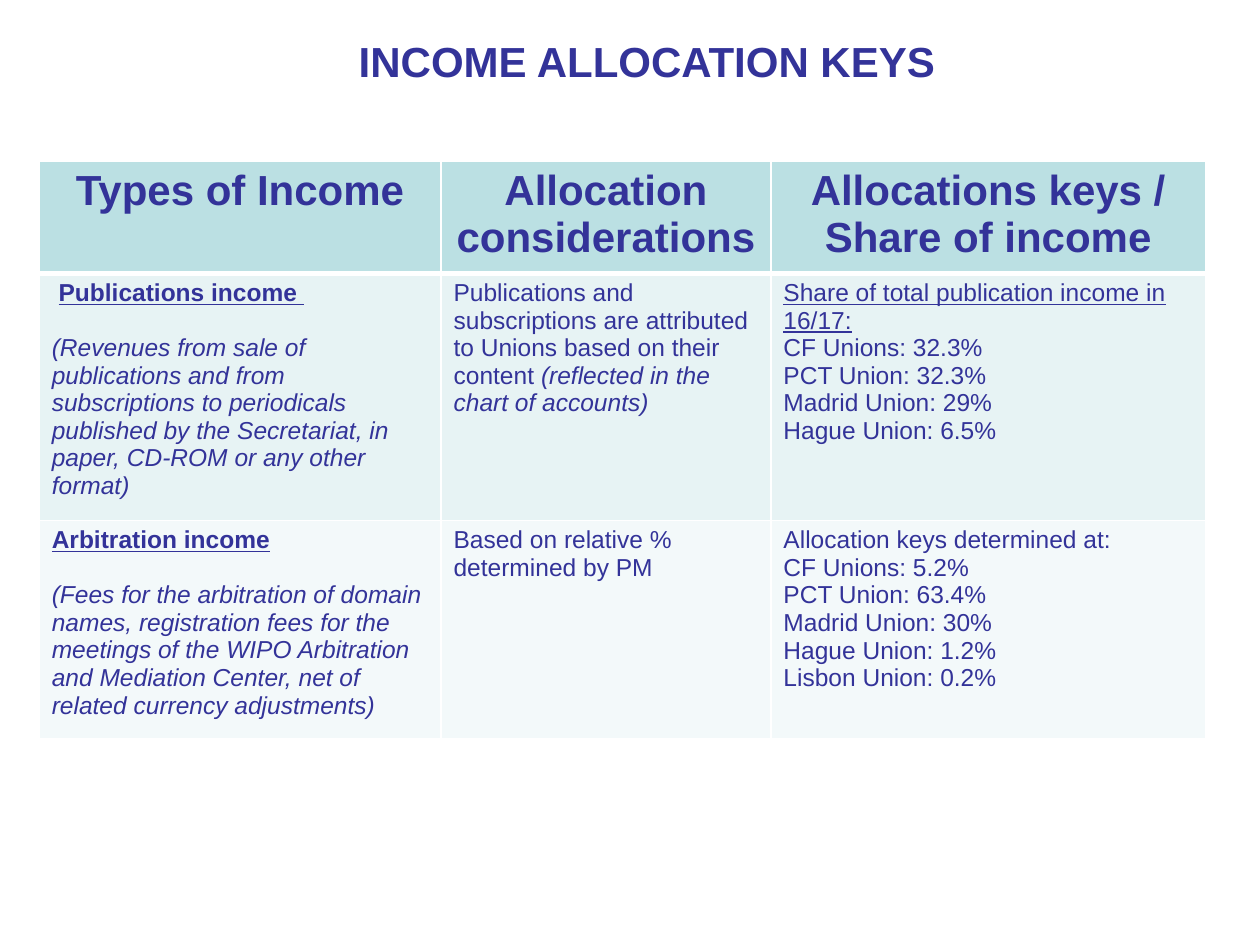
from lxml.etree import SubElement
from pptx import Presentation
from pptx.dml.color import RGBColor
from pptx.enum.text import MSO_ANCHOR, PP_ALIGN
from pptx.oxml.ns import qn
from pptx.util import Cm, Pt

COLORS = {"text": "333399", "border": "FFFFFF"}
ROW_FILLS = ["BBE0E3", "E7F3F4", "F3F9FA"]
ROW_HEIGHTS = [2.26, 4.98, 4.4]
COLUMN_WIDTHS = [8.1, 6.65, 8.76]

TITLE = "INCOME ALLOCATION KEYS"
HEADER = {"size": 24, "bold": True, "align": PP_ALIGN.CENTER}
HEADING = {"bold": True, "underline": True}
DESCRIPTION = {"italic": True, "before": 15.7}

ROWS = [
    [
        [("Types of Income", HEADER)],
        [("Allocation considerations", HEADER)],
        [("Allocations keys /", HEADER), ("Share of income", HEADER)],
    ],
    [
        [
            (" ", {}),
            ("Publications income\u00a0", {**HEADING, "same_line": True}),
            ("(Revenues from sale of publications and from subscriptions to periodicals "
             "published by the Secretariat, in paper, CD‑ROM or any other format)", DESCRIPTION),
        ],
        [
            ("Publications and subscriptions are attributed to Unions based on their content ", {}),
            ("(reflected in the chart of accounts)", {"italic": True, "same_line": True}),
        ],
        [
            ("Share of total publication income in 16/17:", {"underline": True}),
            ("CF Unions: 32.3%", {}),
            ("PCT Union: 32.3%", {}),
            ("Madrid Union: 29%", {}),
            ("Hague Union: 6.5%", {}),
        ],
    ],
    [
        [
            ("Arbitration income", HEADING),
            ("(Fees for the arbitration of domain names, registration fees for the meetings "
             "of the WIPO Arbitration and Mediation Center, net of related currency adjustments)",
             DESCRIPTION),
        ],
        [("Based on relative % determined by PM", {})],
        [
            ("Allocation keys determined at:", {}),
            ("CF Unions: 5.2%", {}),
            ("PCT Union: 63.4%", {}),
            ("Madrid Union: 30%", {}),
            ("Hague Union: 1.2%", {}),
            ("Lisbon Union: 0.2%", {}),
        ],
    ],
]


def add_text(frame, text, size=14, bold=False, italic=False, underline=False,
             align=PP_ALIGN.LEFT, before=0, same_line=False):
    paragraph = frame.paragraphs[-1]
    if paragraph.runs and not same_line:
        paragraph = frame.add_paragraph()
    if not same_line:
        paragraph.alignment = align
        paragraph.space_before = Pt(before)
    run = paragraph.add_run()
    run.text = text
    font = run.font
    font.name, font.size = "Arial", Pt(size)
    font.bold, font.italic, font.underline = bold, italic, underline
    font.color.rgb = RGBColor.from_string(COLORS["text"])


def set_borders(cell, widths):
    properties = cell._tc.get_or_add_tcPr()
    for index, (side, width) in enumerate(widths.items()):
        line = properties.makeelement(qn(f"a:ln{side}"), {"w": str(Pt(width))})
        fill = SubElement(line, qn("a:solidFill"))
        SubElement(fill, qn("a:srgbClr"), val=COLORS["border"])
        properties.insert(index, line)


def add_title(slide):
    title = slide.shapes.title
    title.left, title.top, title.width, title.height = Cm(4.95), Cm(0.58), Cm(16.18), Cm(1.27)
    title.text_frame.vertical_anchor = MSO_ANCHOR.TOP
    title.text_frame.word_wrap = True
    add_text(title.text_frame, TITLE, **HEADER)


def add_income_table(slide):
    table = slide.shapes.add_table(
        len(ROWS), len(COLUMN_WIDTHS), Cm(0.79), Cm(3.25),
        Cm(sum(COLUMN_WIDTHS)), Cm(sum(ROW_HEIGHTS))).table
    for column, width in zip(table.columns, COLUMN_WIDTHS):
        column.width = Cm(width)
    for row_index, (row, height) in enumerate(zip(ROWS, ROW_HEIGHTS)):
        table.rows[row_index].height = Cm(height)
        for column_index, content in enumerate(row):
            cell = table.cell(row_index, column_index)
            cell.fill.solid()
            cell.fill.fore_color.rgb = RGBColor.from_string(ROW_FILLS[row_index])
            set_borders(cell, {"L": 1, "R": 1, "T": 3 if row_index == 1 else 1,
                               "B": 3 if row_index == 0 else 1})
            for text, text_format in content:
                add_text(cell.text_frame, text, **text_format)


def main():
    presentation = Presentation()
    presentation.slide_width, presentation.slide_height = Cm(25.4), Cm(19.05)
    slide = presentation.slides.add_slide(presentation.slide_layouts[5])
    add_income_table(slide)
    add_title(slide)
    presentation.save("out.pptx")


if __name__ == "__main__":
    main()
